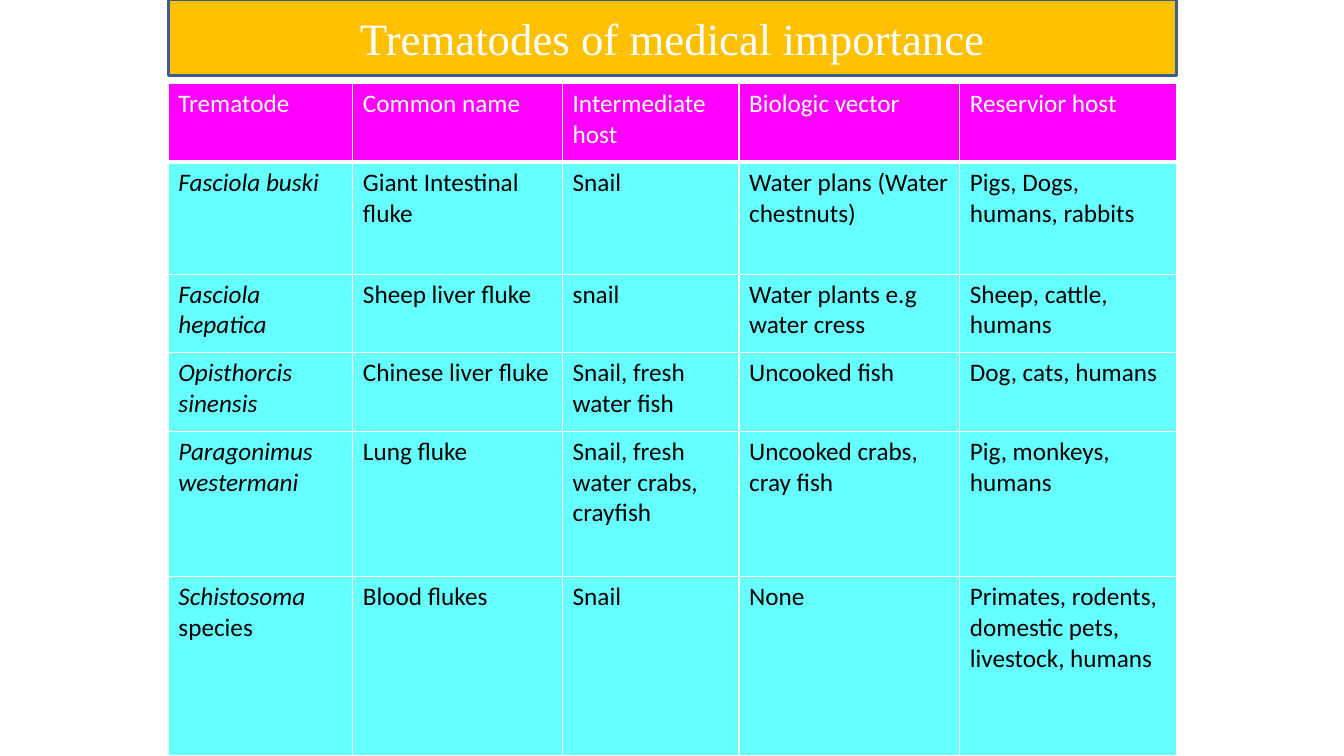
"""Build a slide with a table of trematodes of medical importance."""
from lxml.etree import SubElement
from pptx import Presentation
from pptx.dml.color import RGBColor
from pptx.enum.shapes import MSO_SHAPE
from pptx.enum.text import MSO_ANCHOR, PP_ALIGN
from pptx.oxml.ns import qn
from pptx.util import Inches, Pt

COLORS = {
    "white": "FFFFFF", "black": "000000", "gold": "FFC000",
    "navy": "3A5F8C", "pink": "FF00FF", "aqua": "66FFFF",
}
WIDTHS = [1.83, 2.08, 1.75, 2.19, 2.15]
HEIGHTS = [0.78, 1.11, 0.78, 0.78, 1.44, 1.78]
ROWS = [
    ["Trematode", "Common name", "Intermediate host", "Biologic vector", "Reservior host"],
    ["Fasciola buski", "Giant Intestinal fluke", "Snail",
     "Water plans (Water chestnuts)", "Pigs, Dogs, humans, rabbits"],
    ["Fasciola hepatica", "Sheep liver fluke", "snail",
     "Water plants e.g water cress", "Sheep, cattle, humans"],
    ["Opisthorcis sinensis", "Chinese liver fluke", "Snail, fresh water fish",
     "Uncooked fish", "Dog, cats, humans"],
    ["Paragonimus westermani", "Lung fluke", "Snail, fresh water crabs, crayfish",
     "Uncooked crabs, cray fish", "Pig, monkeys, humans"],
    ["Schistosoma", "Blood flukes", "Snail", "None",
     "Primates, rodents, domestic pets, livestock, humans"],
]


def write(frame, text, size=18, face="Calibri", color="black", italic=False):
    run = frame.paragraphs[0].add_run()
    run.text = text
    font = run.font
    font.size, font.name = Pt(size), face
    font.bold, font.italic = False, italic
    font.color.rgb = RGBColor.from_string(COLORS[color])


def border(cell, side, width):
    line = SubElement(cell._tc.get_or_add_tcPr(), qn(f"a:ln{side}"), w=str(Pt(width)))
    fill = SubElement(line, qn("a:solidFill"))
    SubElement(fill, qn("a:srgbClr"), val=COLORS["white"])


deck = Presentation()
deck.slide_width, deck.slide_height = Inches(13.33), Inches(7.5)
slide = deck.slides.add_slide(deck.slide_layouts[6])

table = slide.shapes.add_table(
    len(ROWS), len(WIDTHS), Inches(1.67), Inches(0.83), Inches(10), Inches(6.67)
).table
table.horz_banding = False
for col, width in zip(table.columns, WIDTHS):
    col.width = Inches(width)
for row, height in zip(table.rows, HEIGHTS):
    row.height = Inches(height)

for r, texts in enumerate(ROWS):
    head = r == 0
    for c, text in enumerate(texts):
        cell = table.cell(r, c)
        for side in "LRTB":
            border(cell, side, 3 if head and side == "B" else 1)
        cell.fill.solid()
        cell.fill.fore_color.rgb = RGBColor.from_string(COLORS["pink" if head else "aqua"])
        write(cell.text_frame, text, color="white" if head else "black",
              italic=c == 0 and not head)
write(table.cell(len(ROWS) - 1, 0).text_frame, " species")

title = slide.shapes.add_shape(
    MSO_SHAPE.RECTANGLE, Inches(1.67), Inches(0), Inches(10), Inches(0.75)
)
title.shadow.inherit = False
title.fill.solid()
title.fill.fore_color.rgb = RGBColor.from_string(COLORS["gold"])
title.line.color.rgb = RGBColor.from_string(COLORS["navy"])
title.line.width = Pt(2)
frame = title.text_frame
frame.word_wrap = True
frame.vertical_anchor = MSO_ANCHOR.MIDDLE
frame.paragraphs[0].alignment = PP_ALIGN.CENTER
write(frame, "Trematodes of medical importance", size=32, face="Times New Roman", color="white")

deck.save("out.pptx")
